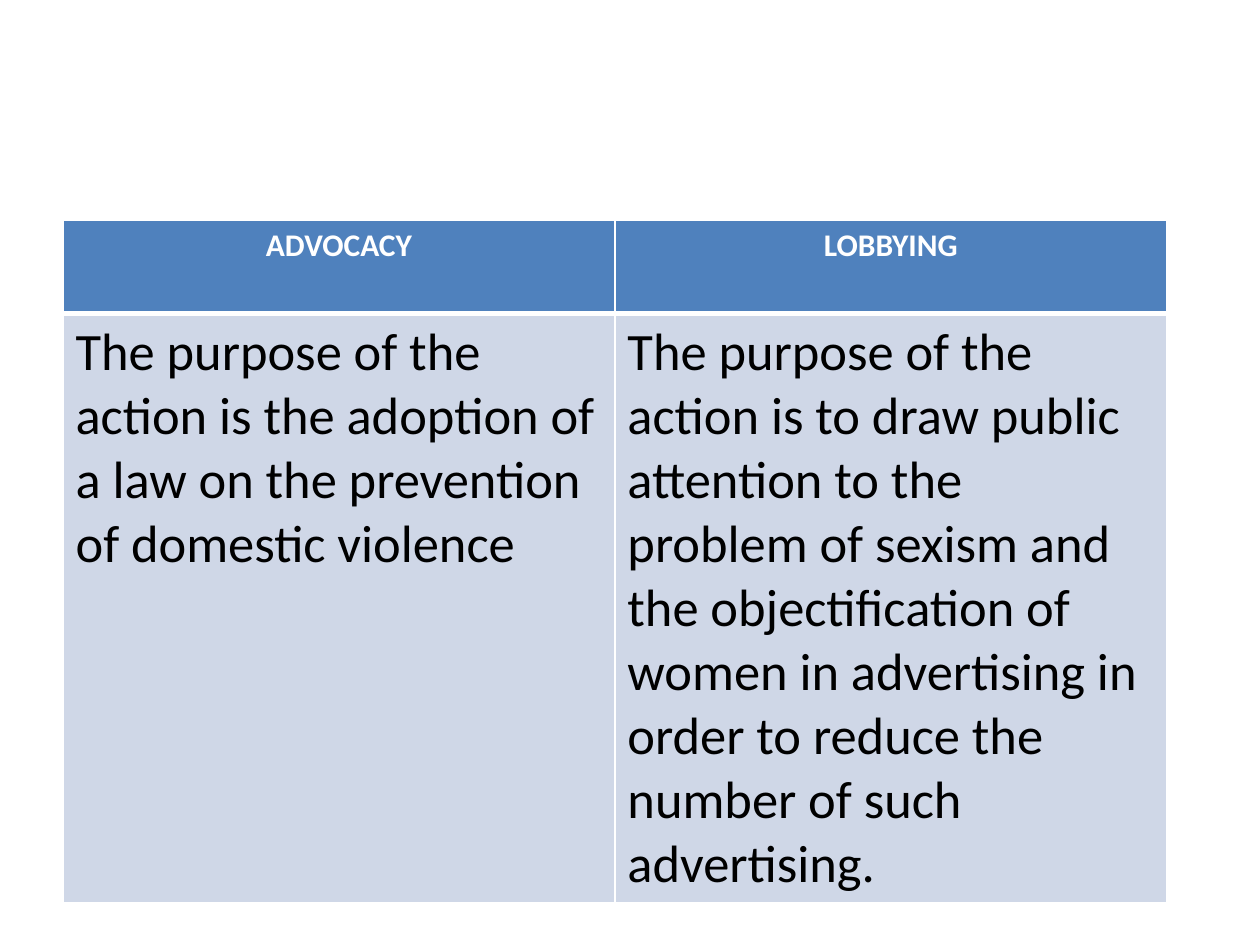
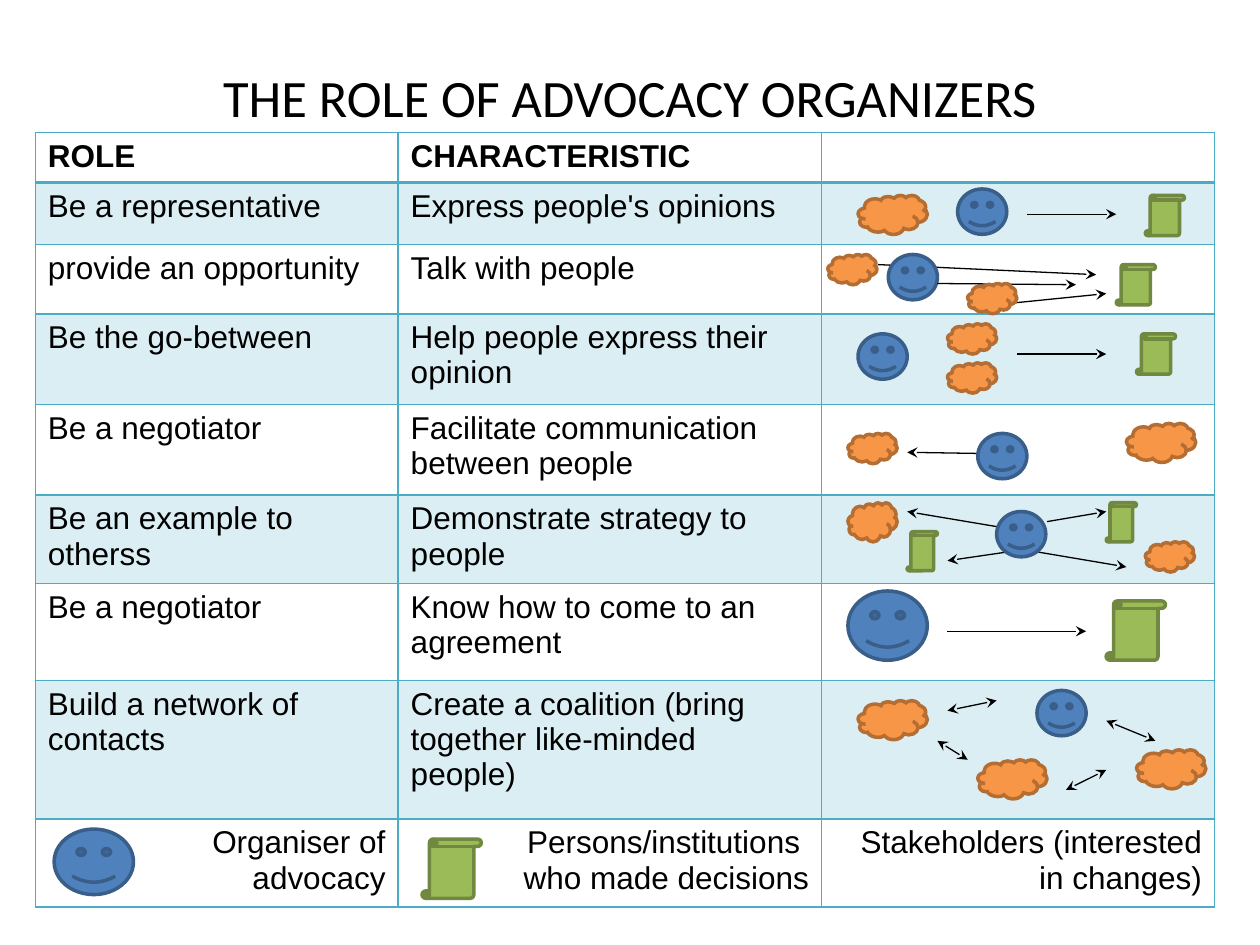
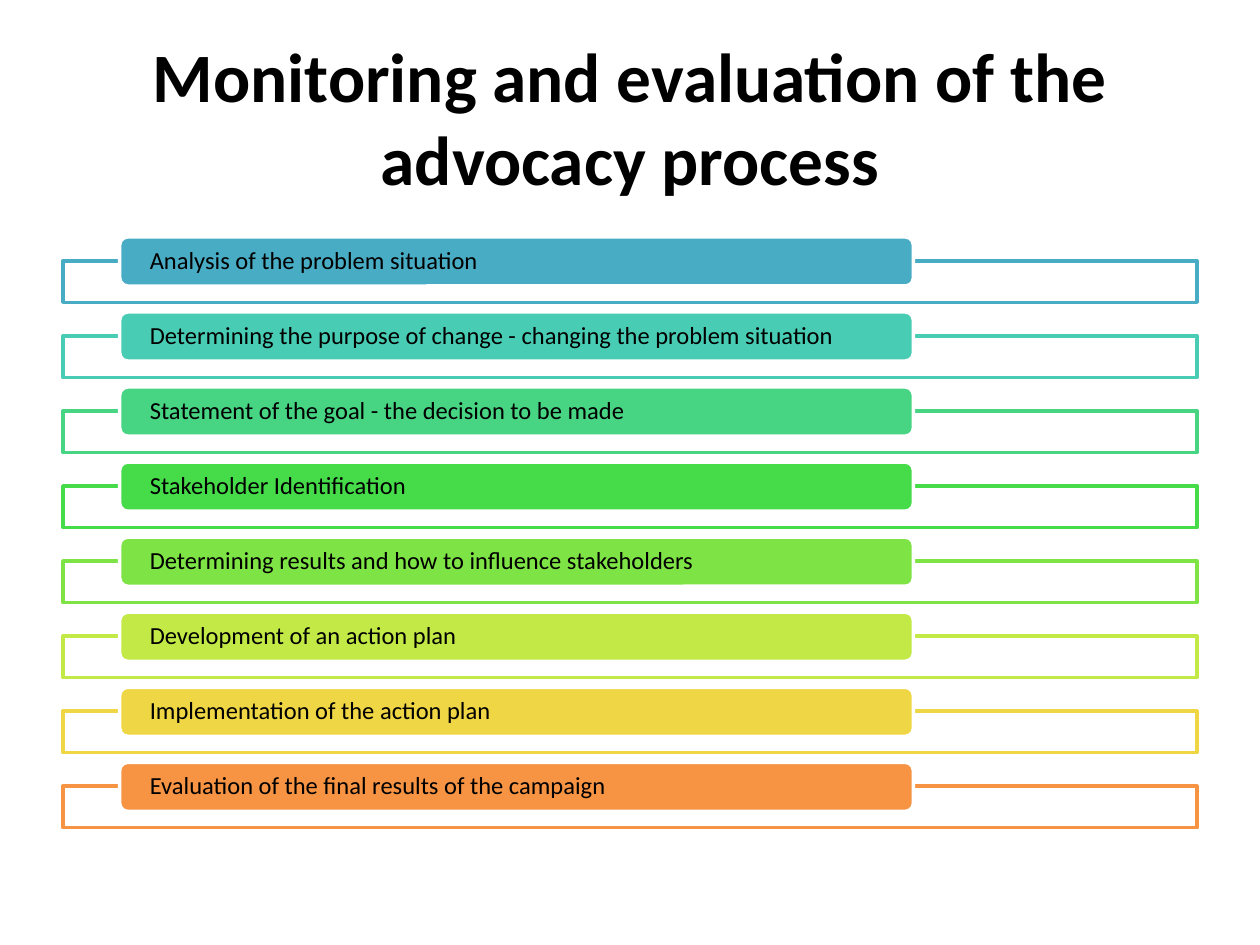
import pptx
import pptx.util
import pptx.dml.color
import pptx.oxml
import pptx.oxml.ns
import pptx.enum.shapes
import pptx.enum.text
import lxml.etree

Inches, Pt = pptx.util.Inches, pptx.util.Pt
MSO = pptx.enum.shapes.MSO_SHAPE
ALIGN = pptx.enum.text.PP_ALIGN
ANCHOR = pptx.enum.text.MSO_ANCHOR
qn = pptx.oxml.ns.qn

# Shared colours
BLACK, WHITE = "000000", "FFFFFF"
BLUE, PALE_BLUE, TEAL = "4F81BD", "CFD7E7", "4BACC6"

# Icons: preset, fill, line, usual width and height
ICONS = {
    "organiser": (MSO.SMILEY_FACE, BLUE, "395E89", 0.39, 0.36),
    "decision": (MSO.VERTICAL_SCROLL, "9BBB59", "718840", 0.31, 0.32),
    "group": (MSO.CLOUD, "F79646", "B46D33", 0.55, 0.31),
    "person": (MSO.CLOUD, "F79646", "B46D33", 0.39, 0.24),
}

ROLES = [
    ("ROLE", "CHARACTERISTIC", ""),
    ("Be a representative", "Express people's opinions", ""),
    ("provide an opportunity", "Talk with people", ""),
    ("Be the go-between", "Help people express their opinion", ""),
    ("Be a negotiator", "Facilitate communication between people", ""),
    ("Be an example to otherss", "Demonstrate strategy to people", ""),
    ("Be a negotiator", "Know how to come to an agreement", ""),
    ("Build a network of contacts",
     "Create a coalition (bring together like-minded people)", ""),
    ("Organiser of advocacy", "Persons/institutions \vwho made decisions",
     "Stakeholders (interested in changes)"),
]

# Diagrams in the third column: icons as (kind, left, top[, width, height]),
# arrows as (kind, x1, y1, x2, y2)
DIAGRAMS = [
    # legend
    ("organiser", 0.43, 6.58, 0.63, 0.52), ("decision", 3.35, 6.66, 0.47, 0.47),
    # representative
    ("group", 6.81, 1.55), ("decision", 9.09, 1.55), ("organiser", 7.6, 1.5),
    ("arrow", 8.15, 1.7, 8.86, 1.7),
    # network of contacts
    ("group", 6.81, 5.56), ("group", 7.76, 6.03), ("group", 9.02, 5.95),
    ("organiser", 8.23, 5.48),
    ("both", 7.68, 6.03, 7.44, 5.88), ("both", 9.17, 5.88, 8.78, 5.72),
    ("both", 7.91, 5.56, 7.52, 5.64), ("both", 8.78, 6.11, 8.46, 6.27),
    # agreement
    ("organiser", 6.73, 4.69, 0.63, 0.55), ("decision", 8.78, 4.77, 0.47, 0.47),
    ("arrow", 7.52, 5.01, 8.62, 5.01),
    # example to others
    ("arrow", 8.31, 4.14, 8.78, 4.06), ("arrow", 8.15, 4.22, 7.2, 4.06),
    ("arrow", 8.23, 4.38, 8.94, 4.5), ("arrow", 8, 4.38, 7.52, 4.45),
    ("organiser", 7.91, 4.06), ("decision", 8.78, 3.99, 0.24, 0.31),
    ("decision", 7.2, 4.22, 0.24, 0.31), ("group", 6.73, 3.99, 0.39, 0.31),
    ("person", 9.09, 4.3),
    # communication
    ("arrow", 7.84, 3.6, 7.2, 3.59), ("organiser", 7.76, 3.44),
    ("person", 6.73, 3.44), ("group", 8.94, 3.36),
    # opportunity
    ("organiser", 7.05, 2.02), ("person", 6.57, 2.02),
    ("arrow", 7.99, 2.41, 8.78, 2.33), ("arrow", 7.44, 2.25, 8.54, 2.26),
    ("person", 7.68, 2.25), ("decision", 8.86, 2.1),
    # go-between
    ("organiser", 6.81, 2.65), ("person", 7.52, 2.57), ("person", 7.52, 2.88),
    ("decision", 9.02, 2.65), ("arrow", 8.07, 2.81, 8.78, 2.81),
]

STEPS = [
    ("Analysis of the problem situation", "49ACC5"),
    ("Determining the purpose of change - changing the problem situation", "48CCB4"),
    ("Statement of the goal - the decision to be made", "47D483"),
    ("Stakeholder Identification", "45DB49"),
    ("Determining results and how to influence stakeholders", "7EE344"),
    ("Development of an action plan", "C2E945"),
    ("Implementation of the action plan", "EFD644"),
    ("Evaluation of the final results of the campaign", "F69444"),
]


def rgb(color):
    return pptx.dml.color.RGBColor.from_string(color)


def set_fill(fill, color, parent, opacity=100):
    """Solid fill; parent is the XML element that holds it."""
    if color is None:
        fill.background()
        return
    fill.solid()
    fill.fore_color.rgb = rgb(color)
    if opacity < 100:
        clr = parent.find(qn("a:solidFill"))[0]
        lxml.etree.SubElement(clr, qn("a:alpha"), val=str(opacity * 1000))


def set_text(tf, text, size=18, font="Calibri", color=BLACK, bold=False,
             align=ALIGN.LEFT, spacing=None):
    p = tf.paragraphs[0]
    p.text = text
    p.alignment = align
    if spacing:
        p.line_spacing = spacing
    for r in p.runs or [p.add_run()]:
        r.font.size, r.font.name, r.font.bold = Pt(size), font, bold
        r.font.color.rgb = rgb(color)


def add_title(s, text, height, **fmt):
    tf = s.shapes.add_textbox(Inches(0.5), Inches(0.3), Inches(9), Inches(height)).text_frame
    tf.word_wrap = True
    tf.vertical_anchor = ANCHOR.MIDDLE
    set_text(tf, text, align=ALIGN.CENTER, **fmt)


def add_shape(s, preset, x, y, w, h, fill, line, opacity=100):
    sp = s.shapes.add_shape(preset, Inches(x), Inches(y), Inches(w), Inches(h))
    sp.shadow.inherit = False
    set_fill(sp.fill, fill, sp._element.spPr, opacity)
    sp.line.color.rgb = rgb(line)
    sp.line.width = Pt(2)
    return sp


def add_icon(s, kind, x, y, w=None, h=None):
    preset, fill, line, usual_w, usual_h = ICONS[kind]
    add_shape(s, preset, x, y, w or usual_w, h or usual_h, fill, line)


def add_arrow(s, x1, y1, x2, y2, both=False):
    cn = s.shapes.add_connector(pptx.enum.shapes.MSO_CONNECTOR.STRAIGHT,
                                Inches(x1), Inches(y1), Inches(x2), Inches(y2))
    cn.line.color.rgb = rgb(BLACK)
    cn.line.width = Pt(0.75)
    for end in ["a:headEnd", "a:tailEnd"] if both else ["a:tailEnd"]:
        lxml.etree.SubElement(cn.line._ln, qn(end), type="stealth")
    lxml.etree.SubElement(cn._element.spPr, qn("a:effectLst"))


def set_borders(cell, color, bottom=1, top=1):
    tcPr = cell._tc.get_or_add_tcPr()
    for side, width in (("L", 1), ("R", 1), ("T", top), ("B", bottom)):
        ln = lxml.etree.SubElement(tcPr, qn("a:ln" + side), w=str(Pt(width)))
        solid = lxml.etree.SubElement(ln, qn("a:solidFill"))
        lxml.etree.SubElement(solid, qn("a:srgbClr"), val=color)


def add_table(s, x, y, widths, heights, border, header_line):
    """Plain table whose header row has a thicker lower edge."""
    tbl = s.shapes.add_table(len(heights), len(widths), Inches(x), Inches(y),
                             Inches(sum(widths)), Inches(sum(heights))).table
    tbl.first_row = tbl.horz_banding = False
    for col, width in zip(tbl.columns, widths):
        col.width = Inches(width)
    for i, (row, height) in enumerate(zip(tbl.rows, heights)):
        row.height = Inches(height)
        for cell in row.cells:
            set_borders(cell, border, bottom=header_line if i == 0 else 1,
                        top=header_line if i == 1 else 1)
    return tbl


def set_cell(cell, text, fill=None, opacity=100, **fmt):
    set_fill(cell.fill, fill, cell._tc.tcPr, opacity)
    set_text(cell.text_frame, text, **fmt)


def build_comparison(s):
    tbl = add_table(s, 0.5, 1.75, [4.38, 4.38], [0.74, 4.67], WHITE, 3)
    columns = [
        ("ADVOCACY", "The purpose of the action is the adoption of a law on "
                     "the prevention of domestic violence"),
        ("LOBBYING", "The purpose of the action is to draw public attention to "
                     "the problem of sexism and the objectification of women in "
                     "advertising in order to reduce the number of such advertising."),
    ]
    for j, (heading, purpose) in enumerate(columns):
        set_cell(tbl.cell(0, j), heading, BLUE, color=WHITE, bold=True, align=ALIGN.CENTER)
        set_cell(tbl.cell(1, j), purpose, PALE_BLUE, size=30)


def build_roles(s):
    add_arrow(s, 6.97, 2.1, 8.7, 2.18)  # runs behind the table and its icons
    add_title(s, "THE ROLE OF ADVOCACY ORGANIZERS", 0.93, size=30)
    tbl = add_table(s, 0.28, 1.05, [2.88, 3.36, 3.12],
                    [0.4, 0.49, 0.55, 0.72, 0.72, 0.7, 0.77, 1.1, 0.7], TEAL, 2)
    legend = len(ROLES) - 1
    for i, row in enumerate(ROLES):
        for j, text in enumerate(row):
            set_cell(tbl.cell(i, j), text, TEAL if i % 2 else None, 20,
                     font="Arial", bold=i == 0,
                     align=ALIGN.RIGHT if i == legend else ALIGN.LEFT)
    tbl.cell(legend, 0).margin_left = Inches(0.9)  # room for the icon
    for kind, *place in DIAGRAMS:
        if kind in ICONS:
            add_icon(s, kind, *place)
        else:
            add_arrow(s, *place, both=kind == "both")


def build_steps(s):
    add_title(s, "Monitoring and evaluation of the advocacy process", 1.25,
              size=39.6, bold=True)
    first, last = 2.07, 6.24
    step = (last - first) / (len(STEPS) - 1)
    for i, (text, color) in enumerate(STEPS):
        y = first + i * step
        add_shape(s, MSO.RECTANGLE, 0.5, y, 9, 0.33, WHITE, color, 90)
        bar = add_shape(s, MSO.ROUNDED_RECTANGLE, 0.95, y - 0.19, 6.3, 0.39, color, WHITE)
        tf = bar.text_frame
        tf.word_wrap = True
        tf.vertical_anchor = ANCHOR.MIDDLE
        tf.margin_left = tf.margin_right = Inches(0.22)
        tf.margin_top = tf.margin_bottom = 0
        set_text(tf, text, size=14, spacing=0.9)


def main():
    prs = pptx.Presentation()
    prs.slide_width, prs.slide_height = Inches(10), Inches(7.5)
    for build in (build_comparison, build_roles, build_steps):
        build(prs.slides.add_slide(prs.slide_layouts[6]))
    prs.save("out.pptx")


if __name__ == "__main__":
    main()
